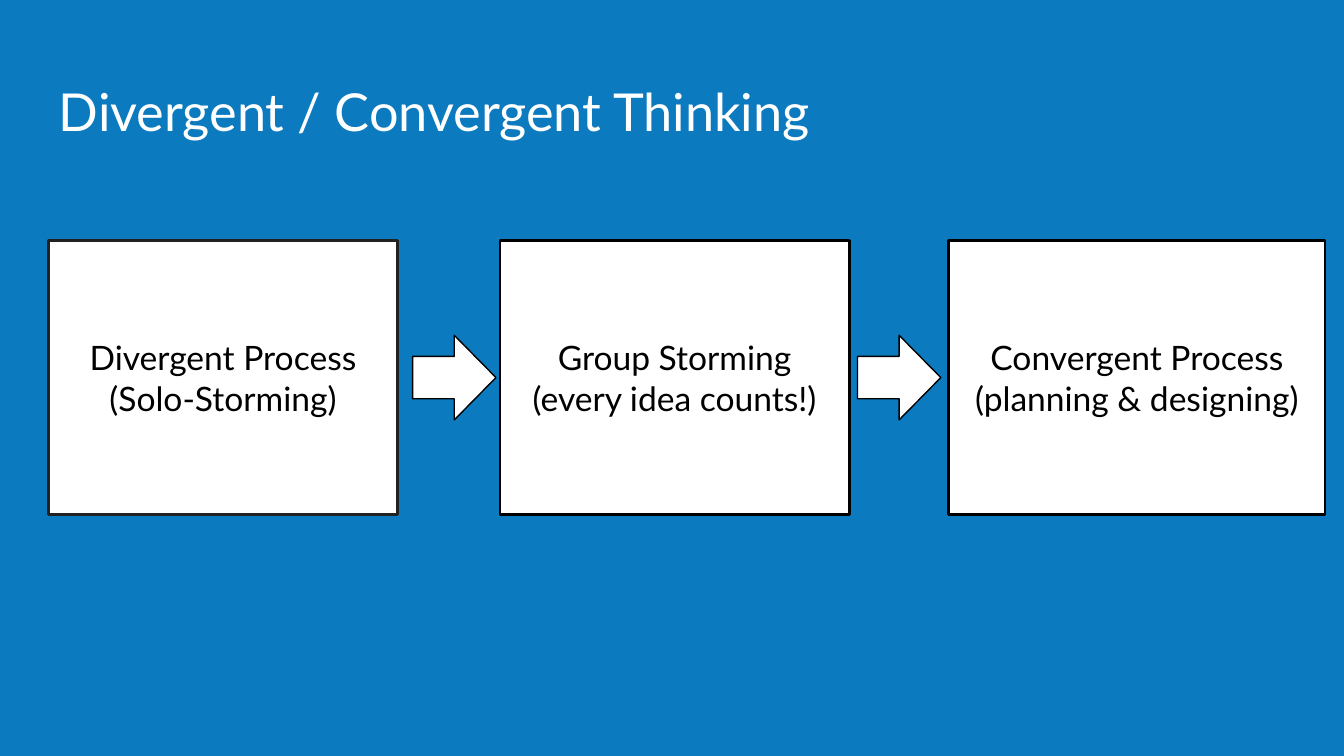
"""Build a slide showing the three steps of divergent and convergent thinking."""
from dataclasses import dataclass

from pptx import Presentation
from pptx.dml.color import RGBColor
from pptx.enum.shapes import MSO_SHAPE as Preset
from pptx.enum.text import MSO_ANCHOR as Anchor, PP_ALIGN as Align
from pptx.util import Inches, Pt

FONT = "Lato"
BLUE, WHITE, BLACK, CHARCOAL = "0B7ABF", "FFFFFF", "000000", "212121"
SLIDE_WIDTH = 10
SLIDE_HEIGHT = SLIDE_WIDTH * 9 / 16
STEP_TOP, STEP_HEIGHT = 1.79, 2.04
ARROW_WIDTH, ARROW_HEIGHT = 0.62, 0.63


@dataclass
class Step:
    left: float
    text: str
    width: float = 2.6
    outline: str = BLACK


STEPS = [
    Step(0.36, "Divergent Process\n(Solo-Storming)", outline=CHARCOAL),
    Step(3.72, "Group Storming (every idea counts!)"),
    Step(7.06, "Convergent Process (planning & designing)", width=2.8),
]
ARROW_LEFTS = [6.38, 3.07]


def paint(color_format, hex_color: str) -> None:
    color_format.rgb = RGBColor.from_string(hex_color)


def write(frame, text: str, size: float, color: str, align: Align) -> None:
    frame.word_wrap = True
    frame.margin_left = frame.margin_right = Inches(0.1)
    frame.margin_top = frame.margin_bottom = Inches(0.1)
    frame.text = text
    for paragraph in frame.paragraphs:
        paragraph.alignment = align
        for run in paragraph.runs:
            run.font.name = FONT
            run.font.size = Pt(size)
            paint(run.font.color, color)


def add_white_shape(slide, preset: Preset, left: float, top: float, width: float,
                    height: float, outline: str, weight: float):
    shape = slide.shapes.add_shape(
        preset, Inches(left), Inches(top), Inches(width), Inches(height))
    shape.shadow.inherit = False
    shape.fill.solid()
    paint(shape.fill.fore_color, WHITE)
    paint(shape.line.color, outline)
    shape.line.width = Pt(weight)
    return shape


def add_step(slide, step: Step) -> None:
    box = add_white_shape(slide, Preset.RECTANGLE, step.left, STEP_TOP,
                          step.width, STEP_HEIGHT, step.outline, 1.5)
    box.text_frame.vertical_anchor = Anchor.MIDDLE
    write(box.text_frame, step.text, 18, BLACK, Align.CENTER)


def add_arrow(slide, left: float) -> None:
    top = STEP_TOP + (STEP_HEIGHT - ARROW_HEIGHT) / 2
    add_white_shape(slide, Preset.RIGHT_ARROW, left, top,
                    ARROW_WIDTH, ARROW_HEIGHT, BLACK, 0.75)


def main() -> None:
    deck = Presentation()
    deck.slide_width, deck.slide_height = Inches(SLIDE_WIDTH), Inches(SLIDE_HEIGHT)
    slide = deck.slides.add_slide(deck.slide_layouts[6])
    slide.background.fill.solid()
    paint(slide.background.fill.fore_color, BLUE)

    title = slide.shapes.add_textbox(
        Inches(0.34), Inches(0.49), Inches(9.32), Inches(0.63))
    write(title.text_frame, "Divergent / Convergent Thinking", 28, WHITE, Align.LEFT)
    for step in STEPS:
        add_step(slide, step)
    for left in ARROW_LEFTS:
        add_arrow(slide, left)
    deck.save("out.pptx")


if __name__ == "__main__":
    main()
